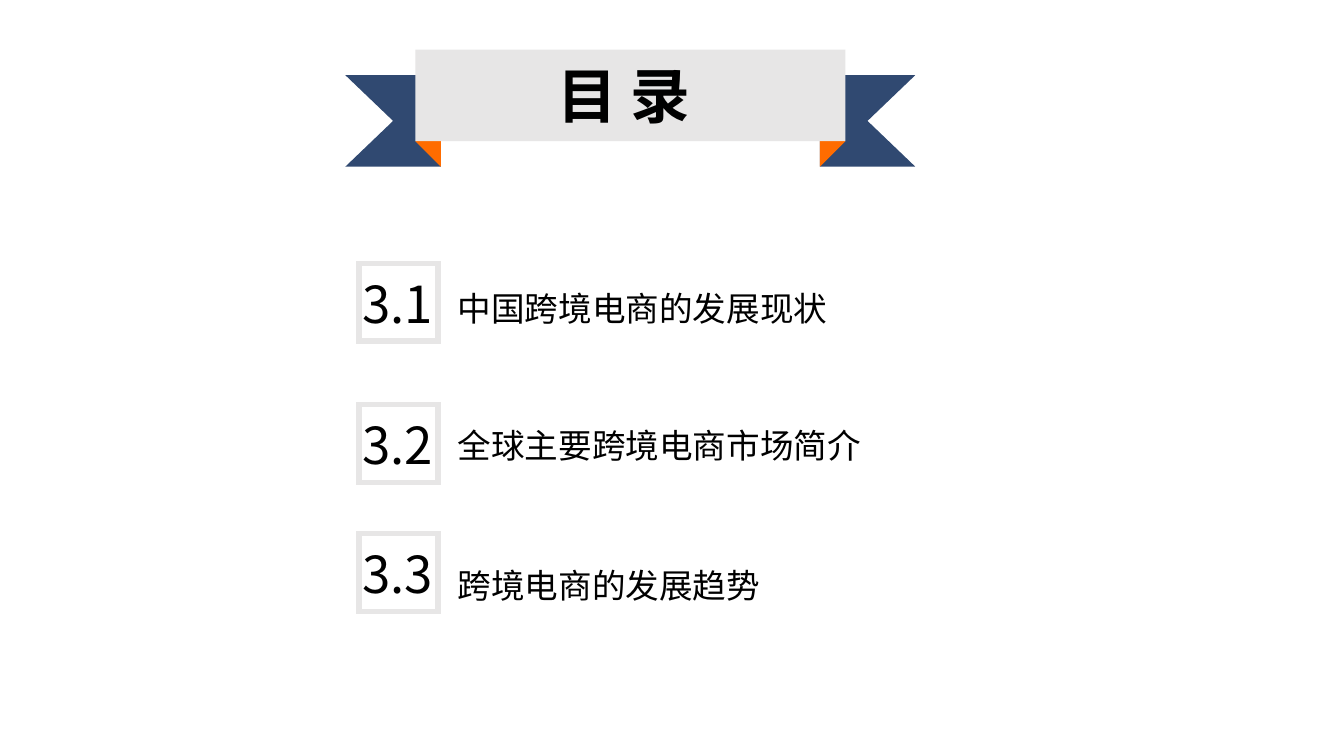
import pptx
import pptx.util
import pptx.dml.color
import pptx.enum.shapes
import pptx.enum.text
import pptx.oxml.ns
import lxml.etree

Inches = pptx.util.Inches
SHAPES = pptx.enum.shapes.MSO_SHAPE
ALIGN = pptx.enum.text.PP_ALIGN

FONT = "Noto Sans CJK SC"
NAVY, ORANGE, GREY, BLACK = "304971", "FF6C00", "E7E6E6", "000000"

# Number, box top, title, title top, title width
SECTIONS = [
    ("3.1", 1.96, " 中国跨境电商的发展现状", 2.10, 3.39),
    ("3.2", 3.01, " 全球主要跨境电商市场简介", 3.12, 3.63),
    ("3.3", 3.97, " 跨境电商的发展趋势", 4.16, 2.52),
]


def color(hex_string):
    return pptx.dml.color.RGBColor.from_string(hex_string)


def add_xml(parent, tag, **attributes):
    lxml.etree.SubElement(parent, pptx.oxml.ns.qn(tag), **attributes)


def paint(shape, fill=None, line=None, line_width=3):
    shape.shadow.inherit = False
    if fill:
        shape.fill.solid()
        shape.fill.fore_color.rgb = color(fill)
    else:
        shape.fill.background()
    if line:
        shape.line.color.rgb = color(line)
        shape.line.width = pptx.util.Pt(line_width)
        # Square outline corners
        add_xml(shape.line._get_or_add_ln(), "a:miter", lim="800000")
    else:
        shape.line.fill.background()


def add_block(slide, kind, left, top, width, height, rotation=0, **style):
    block = slide.shapes.add_shape(
        kind, Inches(left), Inches(top), Inches(width), Inches(height))
    block.rotation = rotation
    paint(block, **style)


def add_ribbon_tail(slide, outer, inner):
    notch = outer + (inner - outer) / 2
    points = [(inner, 0.56), (inner, 1.24), (outer, 1.24), (notch, 0.9)]
    builder = slide.shapes.build_freeform(Inches(outer), Inches(0.56))
    builder.add_line_segments([(Inches(x), Inches(y)) for x, y in points])
    paint(builder.convert_to_shape(), fill=NAVY)


def add_text(slide, text, left, top, width, height, size,
             align=ALIGN.LEFT, bold=False, wrap=True, insets=(0.07, 0.04)):
    box = slide.shapes.add_textbox(
        Inches(left), Inches(top), Inches(width), Inches(height))
    frame = box.text_frame
    frame.word_wrap = wrap
    frame.auto_size = pptx.enum.text.MSO_AUTO_SIZE.SHAPE_TO_FIT_TEXT
    frame.margin_left = frame.margin_right = Inches(insets[0])
    frame.margin_top = frame.margin_bottom = Inches(insets[1])
    frame.text = text
    paragraph = frame.paragraphs[0]
    paragraph.alignment = align
    run = paragraph.runs[0]
    run.font.size = pptx.util.Pt(size)
    run.font.bold = bold
    run.font.name = FONT
    run.font.color.rgb = color(BLACK)
    # Chinese characters take the East Asian typeface
    add_xml(run._r.get_or_add_rPr(), "a:ea", typeface=FONT)


def add_banner(slide):
    # Tails and folds on both sides, then the front panel
    for outer, inner, fold_left, rotation in [(2.57, 3.28, 3.09, 180),
                                              (6.81, 6.1, 6.1, 90)]:
        add_ribbon_tail(slide, outer, inner)
        add_block(slide, SHAPES.RIGHT_TRIANGLE, fold_left, 1.05, 0.19, 0.19,
                  rotation, fill=ORANGE)
    add_block(slide, SHAPES.RECTANGLE, 3.09, 0.37, 3.2, 0.68, fill=GREY)
    add_text(slide, "目 录", 3.34, 0.39, 2.6, 0.64, 32,
             align=ALIGN.CENTER, bold=True, insets=(0.1, 0.05))


def add_section(slide, number, top, title, title_top, title_width):
    add_block(slide, SHAPES.RECTANGLE, 2.67, top, 0.59, 0.58, line=GREY)
    add_text(slide, number, 2.6, top + 0.03, 0.72, 0.53, 27.3,
             align=ALIGN.CENTER, wrap=False)
    add_text(slide, title, 3.28, title_top, title_width, 0.38, 18)


def main():
    deck = pptx.Presentation()
    # Widescreen, 16:9
    deck.slide_width = Inches(10)
    deck.slide_height = Inches(10 * 9 / 16)
    slide = deck.slides.add_slide(deck.slide_layouts[6])
    add_banner(slide)
    for section in SECTIONS:
        add_section(slide, *section)
    deck.save("out.pptx")


if __name__ == "__main__":
    main()
